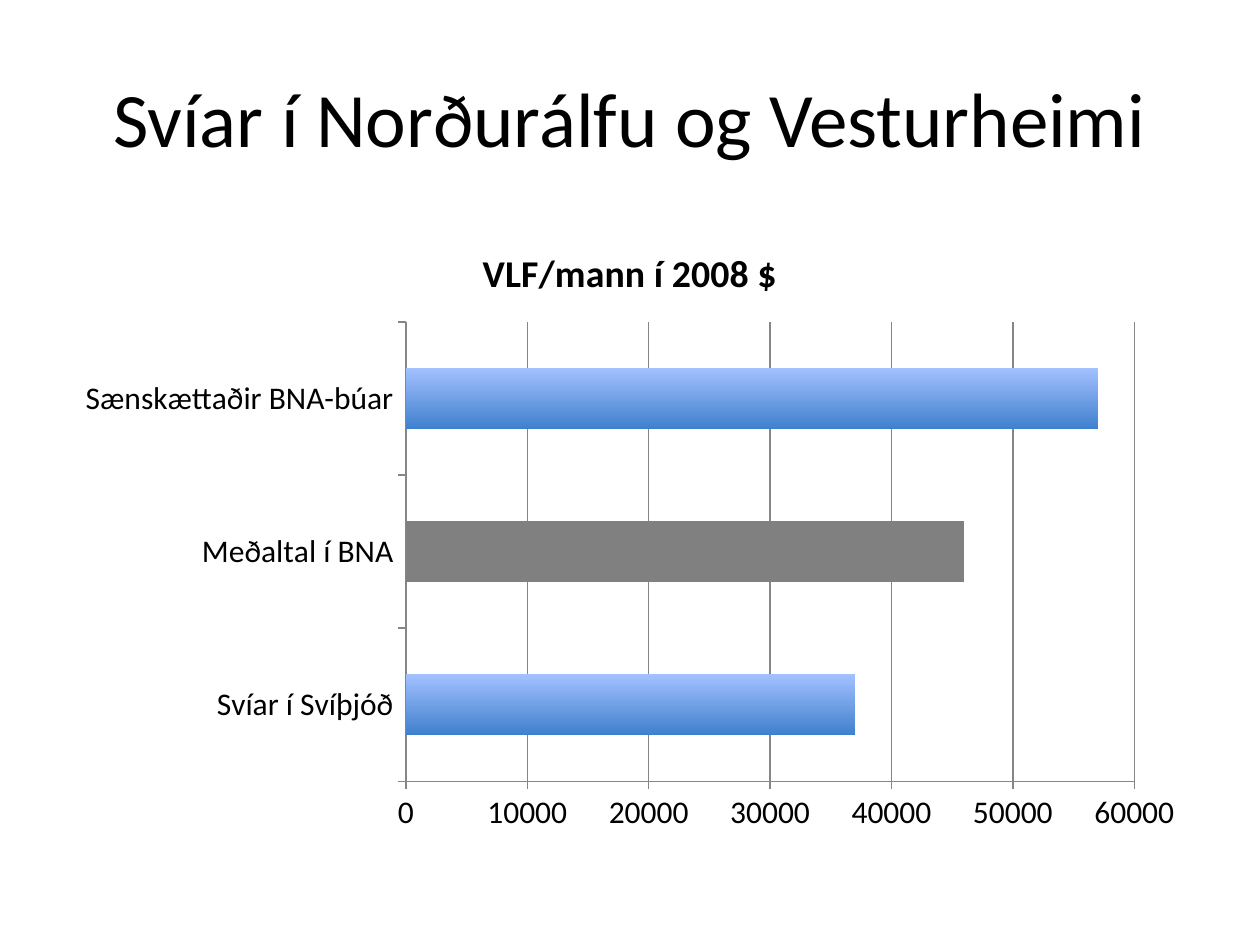
"""Build a slide comparing GDP per person among Swedes in Europe and America."""
from dataclasses import dataclass

from pptx import Presentation
from pptx.chart.data import CategoryChartData
from pptx.dml.color import RGBColor
from pptx.enum.chart import XL_CHART_TYPE, XL_TICK_MARK
from pptx.enum.text import MSO_ANCHOR, PP_ALIGN
from pptx.util import Pt

BAR_CLUSTERED = XL_CHART_TYPE.BAR_CLUSTERED
TICK_OUTSIDE = XL_TICK_MARK.OUTSIDE
TICK_NONE = XL_TICK_MARK.NONE
MIDDLE = MSO_ANCHOR.MIDDLE
CENTER = PP_ALIGN.CENTER

FONT_NAME = "Calibri"
BLACK = "000000"
AXIS_GRAY = "868686"
MARGIN, CONTENT_WIDTH = 36, 648


@dataclass(frozen=True)
class Population:
    label: str
    gdp_per_person: int
    bar_colors: tuple[str, ...]


BLUE_GRADIENT = ("A3C1FF", "3F80CD")
POPULATIONS = [
    Population("Svíar í Svíþjóð", 37000, BLUE_GRADIENT),
    Population("Meðaltal í BNA", 46000, ("808080",)),
    Population("Sænskættaðir BNA-búar", 57000, BLUE_GRADIENT),
]


def color(hex_code: str) -> RGBColor:
    """Convert a hex string to a colour."""
    return RGBColor.from_string(hex_code)


def style_font(font, size: float) -> None:
    """Apply the slide's typeface in black."""
    font.name = FONT_NAME
    font.size = Pt(size)
    font.color.rgb = color(BLACK)


def style_line(line) -> None:
    """Apply the thin gray used by axes and gridlines."""
    line.color.rgb = color(AXIS_GRAY)
    line.width = Pt(0.75)


def fill_bar(fill, bar_colors: tuple[str, ...]) -> None:
    """Fill a bar with one colour or a top-to-bottom gradient."""
    if len(bar_colors) == 1:
        fill.solid()
        fill.fore_color.rgb = color(bar_colors[0])
        return
    fill.gradient()
    fill.gradient_angle = 270
    for stop, hex_code in zip(fill.gradient_stops, bar_colors):
        stop.color.rgb = color(hex_code)


def add_heading(slide, text: str) -> None:
    """Add the centred slide heading."""
    heading = slide.shapes.add_textbox(Pt(MARGIN), Pt(21.6), Pt(CONTENT_WIDTH), Pt(90))
    frame = heading.text_frame
    frame.word_wrap = True
    frame.vertical_anchor = MIDDLE
    frame.text = text
    paragraph = frame.paragraphs[0]
    paragraph.alignment = CENTER
    style_font(paragraph.runs[0].font, 44)


def add_gdp_chart(slide, title: str, populations: list[Population]) -> None:
    """Add the bar chart of GDP per person, titled by its only series."""
    gdp_data = CategoryChartData()
    gdp_data.categories = [population.label for population in populations]
    gdp_data.add_series(title, [population.gdp_per_person for population in populations])
    chart = slide.shapes.add_chart(
        BAR_CLUSTERED, Pt(MARGIN), Pt(126), Pt(CONTENT_WIDTH), Pt(356.4), gdp_data
    ).chart
    style_font(chart.font, 18)
    chart.has_legend = False
    chart.has_title = True
    chart.chart_title.include_in_layout = False

    for axis in (chart.category_axis, chart.value_axis):
        axis.major_tick_mark = TICK_OUTSIDE
        axis.minor_tick_mark = TICK_NONE
        style_line(axis.format.line)
    chart.category_axis.has_major_gridlines = False
    gdp_axis = chart.value_axis
    gdp_axis.minimum_scale, gdp_axis.maximum_scale = 0, 60000
    gdp_axis.major_unit = 10000
    gdp_axis.has_major_gridlines = True
    style_line(gdp_axis.major_gridlines.format.line)

    plot = chart.plots[0]
    plot.gap_width = 150
    plot.vary_by_categories = False
    gdp_series = plot.series[0]
    gdp_series.invert_if_negative = False
    fill_bar(gdp_series.format.fill, BLUE_GRADIENT)
    for index, population in enumerate(populations):
        if population.bar_colors != BLUE_GRADIENT:
            fill_bar(gdp_series.points[index].format.fill, population.bar_colors)


def main() -> None:
    """Create and save the presentation."""
    presentation = Presentation()
    presentation.slide_width, presentation.slide_height = Pt(720), Pt(540)
    slide = presentation.slides.add_slide(presentation.slide_layouts[6])
    add_heading(slide, "Svíar í Norðurálfu og Vesturheimi")
    add_gdp_chart(slide, "VLF/mann í 2008 $", POPULATIONS)
    presentation.save("out.pptx")


if __name__ == "__main__":
    main()
